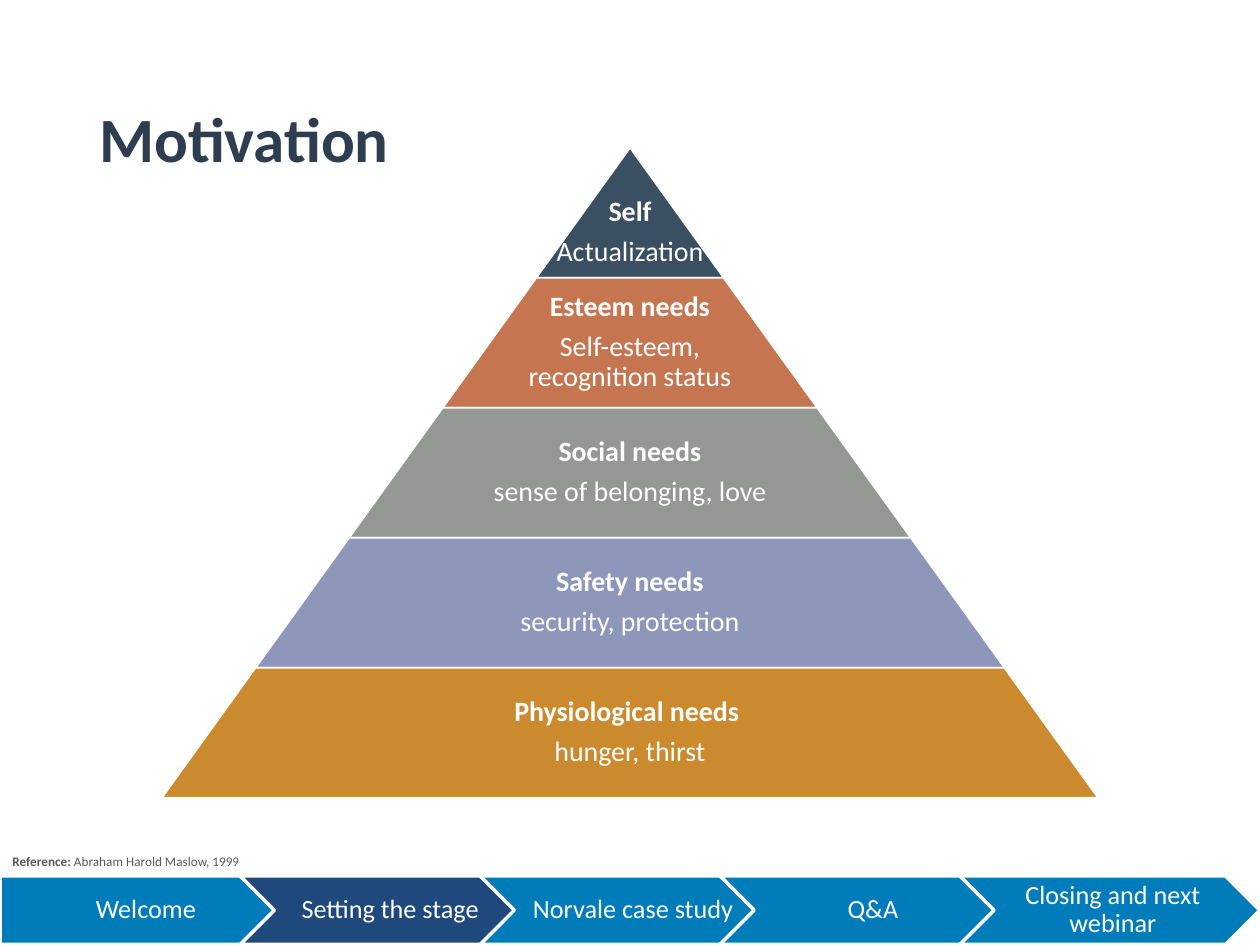
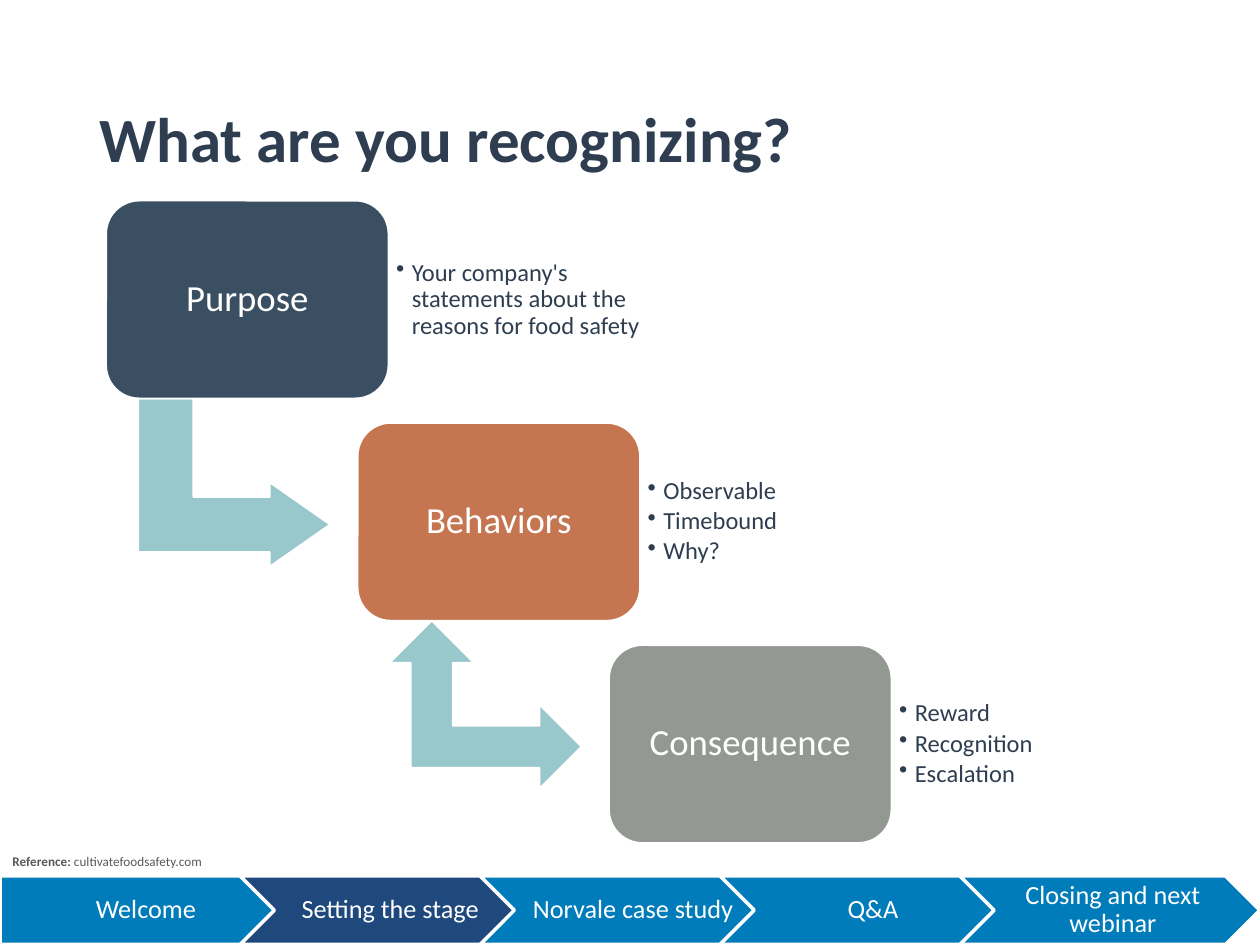
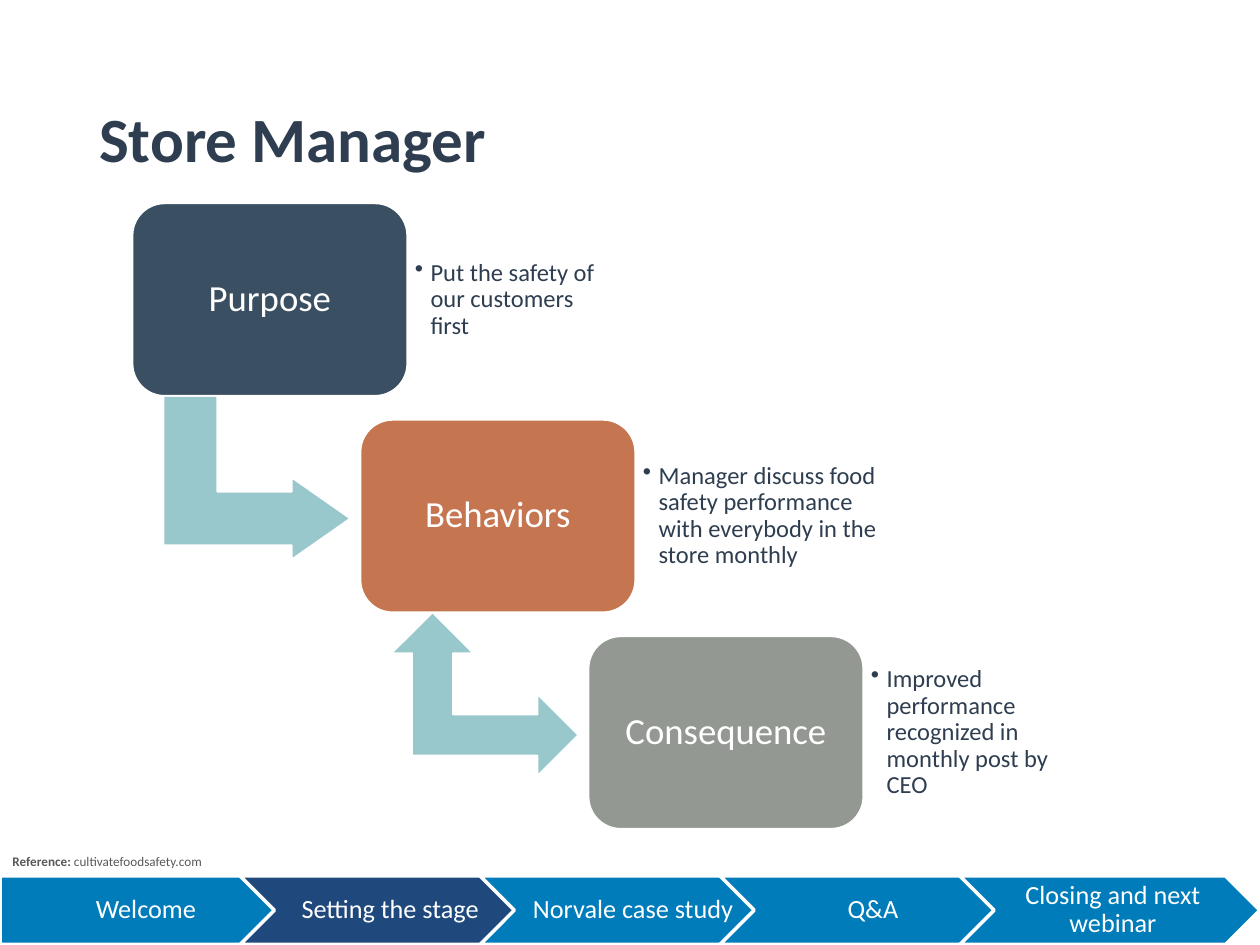
from lxml.etree import SubElement
from pptx import Presentation
from pptx.dml.color import RGBColor
from pptx.enum.shapes import MSO_SHAPE
from pptx.enum.text import MSO_ANCHOR, MSO_AUTO_SIZE, PP_ALIGN
from pptx.oxml.ns import qn
from pptx.util import Pt

COLORS = {
    "ink": "2E3E50",
    "white": "FFFFFF",
    "grey": "595959",
    "slate": "3B4F62",
    "rust": "C57650",
    "stone": "939892",
    "lavender": "8E96B9",
    "ochre": "CB8A2E",
    "aqua": "98C8CC",
    "blue": "007CBA",
    "navy": "1F497D",
}
FONT = "Calibri"
AGENDA = ["Welcome", "Setting the stage ", "Norvale case study", "Q&A", "Closing and next webinar"]
CURRENT_STAGE = 1
NEEDS = [
    ("Self", "Actualization", "slate"),
    ("Esteem needs", "Self-esteem, recognition status", "rust"),
    ("Social needs", "sense of belonging, love", "stone"),
    ("Safety needs", "security, protection", "lavender"),
    ("Physiological needs ", "hunger, thirst", "ochre"),
]
STAGES = [("Purpose", "slate"), ("Behaviors", "rust"), ("Consequence", "stone")]


def color(name):
    """Return the named colour."""
    return RGBColor.from_string(COLORS[name])


def write(frame, lines, size, ink="white", align=PP_ALIGN.LEFT, anchor=MSO_ANCHOR.MIDDLE,
          insets=(7.2, 3.6, 7.2, 3.6), spacing=0.9, after=0, bullet=False):
    """Fill a text frame with lines, each a list of (text, bold) spans."""
    frame.word_wrap = True
    frame.auto_size = MSO_AUTO_SIZE.NONE
    frame.vertical_anchor = anchor
    frame.margin_left, frame.margin_top, frame.margin_right, frame.margin_bottom = map(Pt, insets)
    for index, spans in enumerate(lines):
        para = frame.add_paragraph() if index else frame.paragraphs[0]
        para.alignment = align
        para.line_spacing = spacing
        para.space_after = Pt(after)
        if bullet:
            properties = para._p.get_or_add_pPr()
            properties.set("marL", str(Pt(9)))
            properties.set("indent", str(-Pt(9)))
            SubElement(properties, qn("a:buChar")).set("char", "•")
        for text, bold in spans:
            span = para.add_run()
            span.text = text
            span.font.name = FONT
            span.font.size = Pt(size)
            span.font.bold = bold
            span.font.color.rgb = color(ink)


class Webinar:
    """Holds the deck and the current page, and draws its elements."""

    def __init__(self):
        """Open an empty deck of 10 by 7.5 inches."""
        self.deck = Presentation()
        self.deck.slide_width, self.deck.slide_height = Pt(720), Pt(540)
        self.page = None

    def add_page(self, title, reference):
        """Start a page with its title, reference and agenda band."""
        self.page = self.deck.slides.add_slide(self.deck.slide_layouts[5])
        heading = self.page.shapes.title
        heading.left, heading.top, heading.width, heading.height = map(Pt, (49.5, 29, 621, 104.4))
        write(heading.text_frame, [[(title, True)]], 36, "ink")
        self.text((0, 484, 497.5, 16.5), [[("Reference: ", True), (reference, False)]],
                  size=7.5, ink="grey", anchor=MSO_ANCHOR.TOP, spacing=1.0)
        self.agenda()

    def shape(self, kind, place, fill, line=1, adjustments=(), rotation=0):
        """Draw a filled preset shape with a white outline."""
        box = self.page.shapes.add_shape(kind, *map(Pt, place))
        box.shadow.inherit = False
        box.fill.solid()
        box.fill.fore_color.rgb = color(fill)
        box.line.color.rgb = color("white")
        box.line.width = Pt(line)
        box.rotation = rotation
        for index, value in enumerate(adjustments):
            box.adjustments[index] = value
        return box

    def text(self, place, lines, **style):
        """Place a text box."""
        box = self.page.shapes.add_textbox(*map(Pt, place))
        write(box.text_frame, lines, **style)

    def agenda(self):
        """Draw the agenda band with the current stage in navy."""
        for index, label in enumerate(AGENDA):
            kind = MSO_SHAPE.CHEVRON if index else MSO_SHAPE.PENTAGON
            fill = "navy" if index == CURRENT_STAGE else "blue"
            step = self.shape(kind, (0.1 + 137.1 * index, 500.5, 171.4, 39.2), fill, line=2)
            write(step.text_frame, [[(label, False)]], 15, align=PP_ALIGN.CENTER,
                  insets=(5 if index else 6.5, 3, 1.5, 3))

    def pyramid(self, center, top, growth, height):
        """Draw the needs as tiers that widen evenly downwards."""
        for index, (need, detail, fill) in enumerate(NEEDS):
            width = growth * (index + 1)
            tier_top = top + height * index
            self.shape(MSO_SHAPE.TRAPEZOID, (center - width / 2, tier_top, width, height), fill,
                       adjustments=[growth / 2 / height])
            text_width = width * 0.65 if index else width
            self.text((center - text_width / 2, tier_top, text_width, height),
                      [[(need, True)], [(detail, False)]], size=16, align=PP_ALIGN.CENTER,
                      after=5.6, insets=(1.4, 1.4 if index else 24.3, 1.4, 1.4))

    def staircase(self, left, top, width, height, step_x, step_y, notes):
        """Draw the stages stepping down, joined by arrows, with notes beside them."""
        arrows = [(MSO_SHAPE.BENT_UP_ARROW, (0.328, 0.25, 0.358)), (MSO_SHAPE.LEFT_UP_ARROW, ())]
        for index, ((stage, fill), (note_width, points)) in enumerate(zip(STAGES, notes)):
            x, y = left + step_x * index, top + step_y * index
            if index < len(arrows):
                kind, adjustments = arrows[index]
                arrow_width, arrow_height = 0.85 * height, 0.97 * height
                place = (x + 0.453 * width - arrow_width / 2,
                         y + 1.425 * height - arrow_height / 2, arrow_width, arrow_height)
                self.shape(kind, place, "aqua", adjustments=adjustments, rotation=90)
            box = self.shape(MSO_SHAPE.ROUNDED_RECTANGLE, (x, y, width, height), fill,
                             adjustments=[0.167])
            write(box.text_frame, [[(stage, False)]], 21, align=PP_ALIGN.CENTER,
                  insets=(6.3, 6.3, 6.3, 6.3))
            self.text((x + width, y + 0.095 * height, note_width, 0.81 * height),
                      [[(point, False)] for point in points], size=14, ink="ink",
                      insets=(4.3, 4.3, 4.3, 4.3), after=2.1, bullet=True)


def main():
    """Build the three pages and save the deck."""
    webinar = Webinar()
    webinar.add_page("Motivation", "Abraham Harold Maslow, 1999")
    webinar.pyramid(center=360, top=84.4, growth=107, height=74.3)

    webinar.add_page("What are you recognizing?", "cultivatefoodsafety.com")
    webinar.staircase(60.7, 114.7, 161.3, 113, 143.7, 127, [
        (158.5, ["Your company's statements about the reasons for food safety"]),
        (117.5, ["Observable", "Timebound", "Why?"]),
        (117.5, ["Reward", "Recognition", "Escalation"]),
    ])

    webinar.add_page("Store Manager", "cultivatefoodsafety.com")
    webinar.staircase(75.7, 116.2, 157, 110, 130.3, 123.7, [
        (114.5, ["Put the safety of our customers first"]),
        (147.5, ["Manager discuss food safety performance with everybody in the store monthly"]),
        (120, ["Improved performance recognized in monthly post by CEO"]),
    ])
    webinar.deck.save("out.pptx")


if __name__ == "__main__":
    main()
